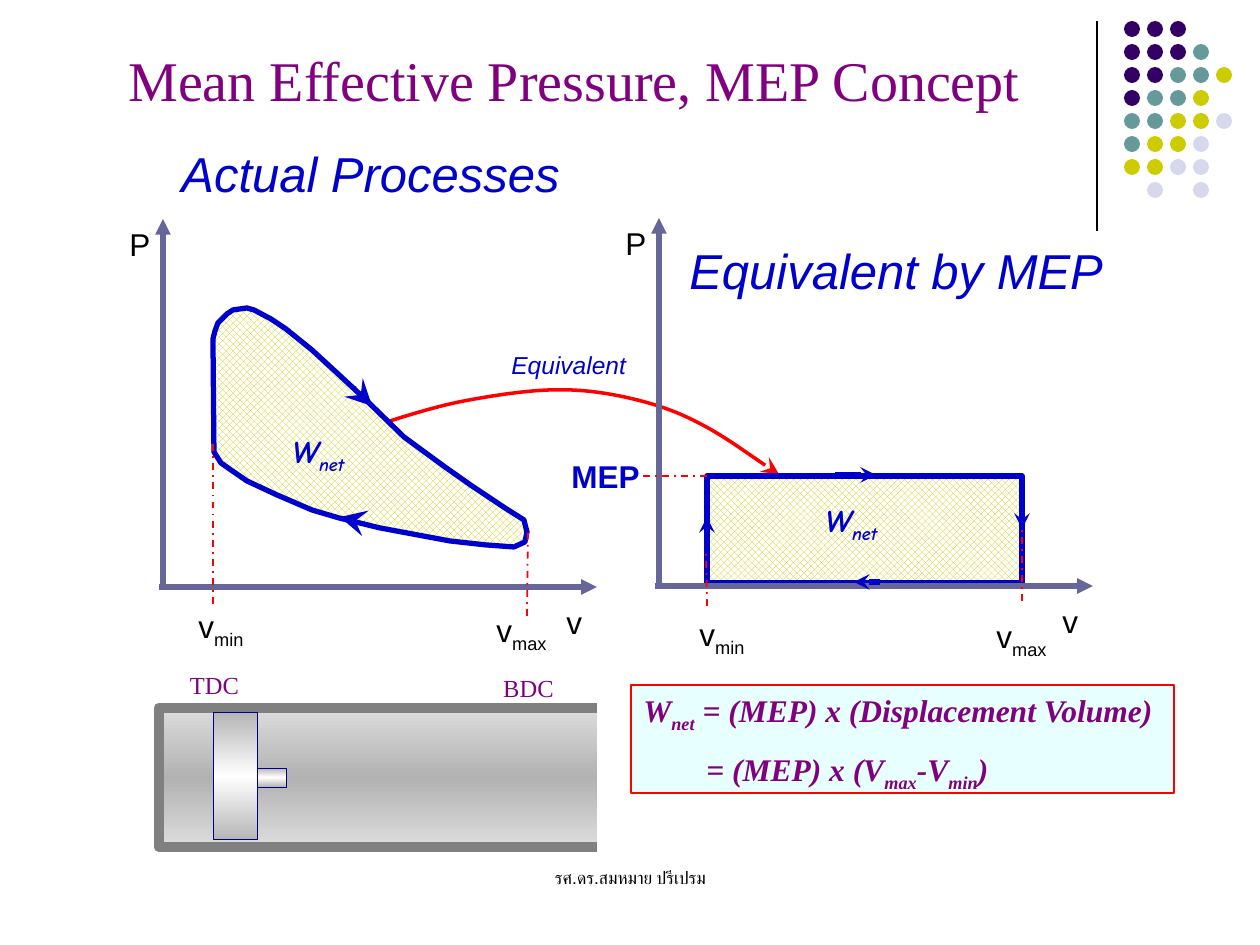
from dataclasses import dataclass

from lxml.etree import SubElement
from pptx import Presentation
from pptx.dml.color import RGBColor as RGB
from pptx.enum.dml import MSO_LINE as Dash, MSO_PATTERN as Pattern
from pptx.enum.shapes import MSO_CONNECTOR as Wire, MSO_SHAPE as Kind
from pptx.enum.text import MSO_ANCHOR as Anchor, MSO_AUTO_SIZE as Fit, PP_ALIGN as Align
from pptx.oxml.ns import qn
from pptx.util import Pt

PX = 914400 / 126  # EMU in one px


@dataclass(frozen=True)
class Theme:
    sans: str = "Arial"
    serif: str = "Times New Roman"
    hand: str = "Comic Neue"
    black: str = "000000"
    white: str = "FFFFFF"
    blue: str = "0000CC"
    navy: str = "000080"
    red: str = "FF0000"
    plum: str = "800080"
    slate: str = "666699"
    gold: str = "CCCC00"
    gray: str = "808080"
    aqua: str = "CCFFFF"
    wall: tuple = ("DCDCDC", "B2B2B2", "DCDCDC")
    steel: tuple = ("B6B6B6", "FFFFFF", "B6B6B6")
    title: int = 32
    head: int = 28
    body: int = 18
    small: int = 14
    foot: int = 10


T = Theme()
DOTS = {"P": "330066", "T": "669999", "Y": T.gold, "L": "D8D8EC"}
GRID = ("PPP", "PPPT", "PPTTY", "PTTY", "TTYYL", "TYYL", "YYLL", " L L")
CYCLE = [(214, 452), (213, 339), (215, 331), (218, 323), (227, 314), (233, 310),
         (247, 308), (254, 310), (271, 319), (286, 329), (312, 350), (336, 372),
         (365, 399), (404, 437), (445, 467), (472, 486), (505, 508), (524, 520),
         (527, 532), (525, 542), (514, 547), (486, 545), (450, 541), (380, 528),
         (339, 518), (312, 510), (277, 495), (247, 481), (231, 470), (221, 463)]
SWEEP = [(387, 422), (399, 418), (437, 406), (464, 401), (490, 396), (522, 391),
         (548, 390), (573, 389), (595, 391), (620, 396), (644, 401), (670, 408),
         (697, 422), (723, 435), (762, 464), (779, 474)]
TUBE = [(597, 708), (159, 708), (159, 847), (597, 847)]


def emu(*nums):
    return [round(n * PX) for n in nums]


def paint(shape, fill=None, line=None, width=1):
    """Fill with a colour, or nothing, and outline the shape."""
    shape.shadow.inherit = False
    if fill:
        shape.fill.solid()
        shape.fill.fore_color.rgb = RGB.from_string(fill)
    else:
        shape.fill.background()
    if line:
        shape.line.color.rgb = RGB.from_string(line)
        shape.line.width = Pt(width)
    else:
        shape.line.fill.background()


def hatch(shape):
    shape.fill.patterned()
    shape.fill.pattern = Pattern.OUTLINED_DIAMOND
    shape.fill.fore_color.rgb = RGB.from_string(T.gold)
    shape.fill.back_color.rgb = RGB.from_string(T.white)


def shade(shape, hues):
    """Grade the fill from top to bottom through three colours."""
    shape.fill.gradient()
    shape.fill.gradient_angle = 270
    stops = shape._element.spPr.find(".//" + qn("a:gsLst"))
    for stop in list(stops):
        stops.remove(stop)
    for n, hue in enumerate(hues):
        stop = SubElement(stops, qn("a:gs"), pos=str(n * 50000))
        SubElement(stop, qn("a:srgbClr"), val=hue)


def tip(shape, head, size="med"):
    ln = shape._element.spPr.find(qn("a:ln"))
    SubElement(ln, qn("a:tailEnd"), type=head, w=size, len=size)


def box(slide, kind, spot, fill=None, line=None, width=1):
    shape = slide.shapes.add_shape(kind, *emu(*spot))
    paint(shape, fill, line, width)
    return shape


def trace(slide, pts, close, line, width):
    pen = slide.shapes.build_freeform(*pts[0], scale=PX)
    pen.add_line_segments(pts[1:], close=close)
    shape = pen.convert_to_shape()
    paint(shape, None, line, width)
    return shape


def bend(shape):
    """Turn each three line segments into one cubic curve."""
    segs = list(shape._element.iter(qn("a:lnTo")))
    for n in range(0, len(segs), 3):
        curve = SubElement(segs[n].getparent(), qn("a:cubicBezTo"))
        for seg in segs[n:n + 3]:
            curve.append(seg[0])
            seg.getparent().remove(seg)


def rule(slide, ends, color, width, head=None, size="med", dash=None):
    wire = slide.shapes.add_connector(Wire.STRAIGHT, *emu(*ends))
    wire.line.color.rgb = RGB.from_string(color)
    wire.line.width = Pt(width)
    if dash:
        wire.line.dash_style = dash
    if head:
        tip(wire, head, size)
    SubElement(wire._element.spPr, qn("a:effectLst"))


def style(run, size, color, font, bold=False, slant=False):
    face = run.font
    face.name, face.size = font, Pt(size)
    face.bold, face.italic = bold, slant
    face.color.rgb = RGB.from_string(color)


def write(shape, lines, *look, align=Align.LEFT, wrap=True, **flags):
    """Set the lines; every second part between bars is a subscript."""
    frame = shape.text_frame
    frame.word_wrap = wrap
    frame.auto_size = Fit.SHAPE_TO_FIT_TEXT
    frame.vertical_anchor = Anchor.TOP
    for n, line in enumerate(lines.split("\n")):
        para = frame.add_paragraph() if n else frame.paragraphs[0]
        para.alignment = align
        for m, part in enumerate(line.split("|")):
            run = para.add_run()
            run.text = part
            style(run, *look, **flags)
            if m % 2:
                run._r.get_or_add_rPr().set("baseline", "-25000")


def label(slide, spot, text, size=T.body, color=T.black, font=T.sans, **flags):
    area = slide.shapes.add_textbox(*emu(*spot))
    write(area, text, size, color, font, **flags)


def title(slide):
    head = slide.shapes.title
    head.left, head.top, head.width, head.height = emu(87, 39, 975, 79)
    write(head, "Mean Effective Pressure, MEP Concept", T.title, T.plum, T.serif,
          align=Align.CENTER)


def corner(slide):
    rule(slide, (1097, 21, 1097, 231), T.black, 0.75)
    for row, marks in enumerate(GRID):
        for col, mark in enumerate(marks):
            if mark in DOTS:
                box(slide, Kind.OVAL, (1124 + 23 * col, 21 + 23 * row, 16, 16), DOTS[mark])


def axes(slide, x, y):
    """Draw the P and v axes from their crossing point."""
    rule(slide, (x - 4, y, x + 434, y), T.slate, 3, "triangle")
    rule(slide, (x, y + 3, x, y - 368), T.slate, 3, "triangle")
    label(slide, (x + 391, y + 10, 42, 50), "v")
    label(slide, (x - 46, y - 368, 42, 50), "P")


def limits(slide, low, high, drops):
    """Name the two volumes and drop a dashed line to each."""
    label(slide, (*low, 95, 50), "v|min")
    label(slide, (*high, 91, 50), "v|max")
    for ends in drops:
        rule(slide, ends, T.red, 1, dash=Dash.DASH_DOT)


def work(slide, x, y):
    label(slide, (x, y, 97, 50), "W|net", T.body, T.blue, T.hand, bold=True, slant=True)


def flow(slide, size, *arrows):
    for ends in arrows:
        rule(slide, ends, T.blue, 3, "stealth", size)


def actual(slide):
    axes(slide, 163, 587)
    hatch(trace(slide, CYCLE, True, T.blue, 3))
    limits(slide, (186, 601), (484, 605), [(213, 604, 213, 442), (527, 616, 528, 529)])
    flow(slide, "lg", (354, 388, 372, 406), (364, 523, 340, 517))
    work(slide, 280, 426)
    label(slide, (169, 137, 420, 72), "Actual Processes", T.head, T.blue, slant=True)


def equal(slide):
    hatch(box(slide, Kind.RECTANGLE, (707, 476, 315, 107), T.white, T.blue, 3))
    work(slide, 813, 495)
    axes(slide, 659, 586)
    limits(slide, (687, 609), (984, 611),
           [(707, 606, 706, 549), (1022, 601, 1022, 528), (707, 476, 639, 476)])
    flow(slide, "med", (835, 475, 876, 475), (880, 582, 854, 582),
         (1022, 505, 1022, 529), (707, 538, 707, 517))
    label(slide, (559, 451, 95, 50), "MEP", T.body, T.blue, bold=True)
    label(slide, (677, 234, 449, 72), "Equivalent by MEP", T.head, T.blue, slant=True)


def engine(slide):
    shade(trace(slide, TUBE, False, T.gray, 6), T.wall)
    for spot in ((213, 713, 44, 127), (257, 768, 29, 19)):
        shade(box(slide, Kind.RECTANGLE, spot, T.white, T.navy, 0.5), T.steel)
    for x, y, name in ((171, 664, "TDC"), (485, 667, "BDC")):
        label(slide, (x, y, 87, 42), name, T.small, T.plum, T.serif, align=Align.CENTER)


def link(slide):
    label(slide, (499, 344, 147, 42), "Equivalent", T.small, T.blue, slant=True)
    curve = trace(slide, SWEEP, False, T.red, 2)
    bend(curve)
    tip(curve, "stealth", "lg")


def formula(slide):
    card = box(slide, Kind.RECTANGLE, (631, 685, 543, 108), T.aqua, T.red, 0.75)
    tint = card._element.spPr.find(".//" + qn("a:srgbClr"))
    SubElement(tint, qn("a:alpha"), val="44000")
    write(card, "W|net| = (MEP) x (Displacement Volume)\n= (MEP) x (V|max|-V|min|)",
          T.body, T.plum, T.serif, wrap=False, bold=True, slant=True)
    last = card.text_frame.paragraphs[1]
    last.space_before = Pt(9)
    last._p.get_or_add_pPr().set("marL", str(Pt(36)))


def main():
    deck = Presentation()
    deck.slide_width, deck.slide_height = emu(1260, 945)
    slide = deck.slides.add_slide(deck.slide_layouts[5])
    title(slide)
    corner(slide)
    label(slide, (431, 861, 399, 63), "รศ.ดร.สมหมาย ปรีเปรม", T.foot, align=Align.CENTER)
    engine(slide)
    link(slide)
    actual(slide)
    equal(slide)
    formula(slide)
    deck.save("out.pptx")


if __name__ == "__main__":
    main()
